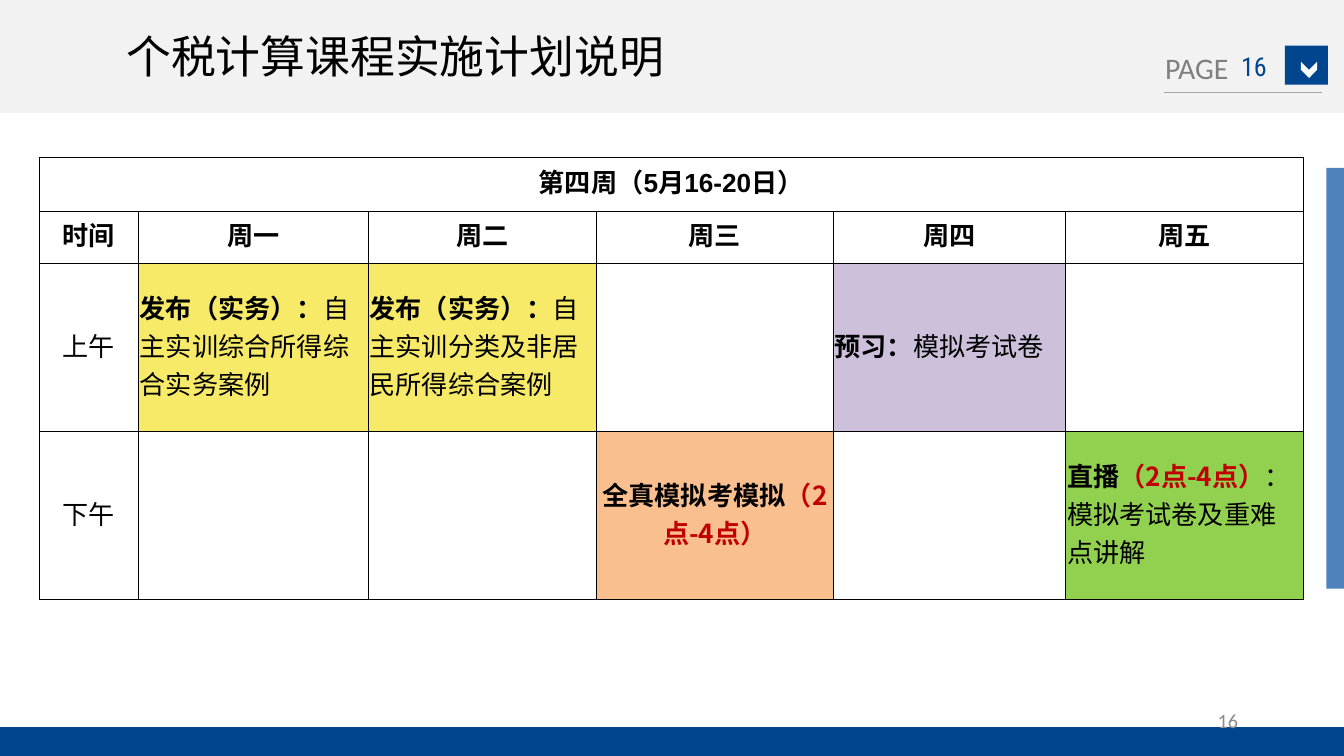
"""Build the weekly course plan slide with its page frame and timetable."""
from dataclasses import dataclass

import lxml.etree
import pptx
import pptx.dml.color
import pptx.enum.shapes
import pptx.enum.text
import pptx.oxml.ns
import pptx.util

Inches = pptx.util.Inches
Kind = pptx.enum.shapes.MSO_SHAPE
Align = pptx.enum.text.PP_ALIGN
Anchor = pptx.enum.text.MSO_ANCHOR
qn = pptx.oxml.ns.qn
HAN = "Noto Sans CJK SC"
NAVY, BLACK, RED = "01458E", "000000", "C00000"


@dataclass
class Box:
    at: tuple
    fill: str
    kind: int = Kind.RECTANGLE
    turn: float = 0


@dataclass
class Run:
    text: str
    bold: bool = False
    hue: str = BLACK
    size: float = 14
    face: str = HAN


@dataclass
class Label:
    at: tuple
    run: Run
    align: int = Align.LEFT
    anchor: int = Anchor.MIDDLE
    wrap: bool = True


@dataclass
class Slot:
    row: int
    col: int
    paras: list
    fill: str = ""
    align: int = Align.CENTER


def color(code: str):
    return pptx.dml.color.RGBColor.from_string(code)


def place(at: tuple) -> list:
    return [Inches(n) for n in at]


def format(thing, **values) -> None:
    for name, value in values.items():
        setattr(thing, name, value)


def write(para, runs: list, align: int) -> None:
    para.alignment = align
    for item in runs:
        run = para.add_run()
        run.text = item.text
        format(run.font, size=pptx.util.Pt(item.size), bold=item.bold, name=item.face)
        run.font.color.rgb = color(item.hue)
        lxml.etree.SubElement(run.font._element, qn("a:ea"), typeface=HAN)


def draw_box(shapes, box: Box) -> None:
    shape = shapes.add_shape(box.kind, *place(box.at))
    shape.shadow.inherit = False
    shape.rotation = box.turn
    shape.fill.solid()
    shape.fill.fore_color.rgb = color(box.fill)
    shape.line.fill.background()


def draw_rule(shapes, ends: tuple, hue: str) -> None:
    rule = shapes.add_connector(pptx.enum.shapes.MSO_CONNECTOR.STRAIGHT, *place(ends))
    rule.line.color.rgb = color(hue)
    rule.line.width = pptx.util.Pt(0.75)
    lxml.etree.SubElement(rule._element.spPr, qn("a:effectLst"))


def draw_label(shapes, label: Label) -> None:
    frame = shapes.add_textbox(*place(label.at)).text_frame
    format(frame, word_wrap=label.wrap, vertical_anchor=label.anchor)
    write(frame.paragraphs[0], [label.run], label.align)


def draw_title(shapes, text: str) -> None:
    title = shapes.title
    left, top, width, height = place((0.84, 0.16, 5.81, 0.5))
    format(title, left=left, top=top, width=width, height=height)
    format(title.text_frame, word_wrap=True, vertical_anchor=Anchor.TOP,
           auto_size=pptx.enum.text.MSO_AUTO_SIZE.NONE)
    write(title.text_frame.paragraphs[0], [Run(text, size=24, face="Arial")], Align.LEFT)
    shapes.element.append(title.element)


def style_cell(cell) -> None:
    edge = Inches(0.01)
    format(cell, margin_left=edge, margin_right=edge, margin_top=edge,
           margin_bottom=Inches(0.05), vertical_anchor=Anchor.MIDDLE)
    props = cell._tc.get_or_add_tcPr()
    for side in ("lnL", "lnR", "lnT", "lnB"):
        line = lxml.etree.SubElement(props, qn(f"a:{side}"), w=str(pptx.util.Pt(0.5)))
        fill = lxml.etree.SubElement(line, qn("a:solidFill"))
        lxml.etree.SubElement(fill, qn("a:srgbClr"), val=BLACK)
    cell.fill.background()


def draw_table(shapes, cols: list, rows: list, slots: list) -> None:
    at = (0.29, 1.17, sum(cols), sum(rows))
    table = shapes.add_table(len(rows), len(cols), *place(at)).table
    format(table, first_row=False, horz_banding=False)
    for col, width in zip(table.columns, cols):
        col.width = Inches(width)
    for row, height in zip(table.rows, rows):
        row.height = Inches(height)
    for cell in table.iter_cells():
        style_cell(cell)
    table.cell(0, 0).merge(table.cell(0, len(cols) - 1))
    for slot in slots:
        cell = table.cell(slot.row, slot.col)
        frame = cell.text_frame
        for i, runs in enumerate(slot.paras):
            para = frame.add_paragraph() if i else frame.paragraphs[0]
            write(para, runs, slot.align)
        if slot.fill:
            cell.fill.solid()
            cell.fill.fore_color.rgb = color(slot.fill)


BOXES = [
    Box((0, 0, 10, 0.84), "F2F2F2"),
    Box((0, 5.41, 10, 0.22), NAVY),
    Box((9.56, 0.34, 0.32, 0.29), NAVY),
    Box((9.68, 0.46, 0.12, 0.12), "FFFFFF", Kind.CHEVRON, 90),
    Box((9.87, 1.25, 0.13, 3.13), "4F81BD"),
]
LABELS = [
    Label((8.57, 0.32, 0.68, 0.37), Run("PAGE", hue="808080", size=16, face="Calibri"),
          anchor=Anchor.TOP, wrap=False),
    Label((9.09, 0.34, 0.48, 0.3), Run("16", hue=NAVY, face="Roboto Condensed"), Align.CENTER),
    Label((7.06, 5.21, 2.25, 0.3), Run("16", hue="8C8C8C", size=10.8, face="Calibri"),
          Align.RIGHT),
]
HEADS = ["时间", "周一", "周二", "周三", "周四", "周五"]
TASK = Run("发布（实务）：", True)
HOURS = Run("（2点-4点）", True, RED)
YELLOW = "F7EA68"
SLOTS = [
    Slot(0, 0, [[Run("第四周（5月16-20日）", True, face="Arial")]]),
    *[Slot(1, i, [[Run(head, True)]]) for i, head in enumerate(HEADS)],
    *[Slot(i, 0, [[Run(time)]]) for i, time in enumerate(["上午", "下午"], 2)],
    Slot(2, 1, [[TASK, Run("自主实训综合所得综合实务案例")]], YELLOW, Align.LEFT),
    Slot(2, 2, [[TASK, Run("自主实训分类及非居民所得综合案例")]], YELLOW, Align.LEFT),
    Slot(2, 4, [[Run("预习：", True), Run("模拟考试卷")]], "CCC0DA", Align.LEFT),
    Slot(3, 3, [[Run("全真模拟考模拟", True), HOURS]], "FABF8F"),
    Slot(3, 5, [[Run("直播", True), HOURS, Run("：")], [Run("模拟考试卷及重难点讲解")]],
         "92D050", Align.LEFT),
]


def main() -> None:
    deck = pptx.Presentation()
    wide = Inches(10)
    format(deck, slide_width=wide, slide_height=wide * 9 // 16)
    shapes = deck.slides.add_slide(deck.slide_layouts[5]).shapes
    for box in BOXES:
        draw_box(shapes, box)
    draw_rule(shapes, (8.66, 0.69, 9.84, 0.69), "A6A6A6")
    for label in LABELS:
        draw_label(shapes, label)
    draw_title(shapes, "个税计算课程实施计划说明")
    draw_table(shapes, [0.74, 1.71, 1.7, 1.76, 1.73, 1.77], [0.4, 0.39, 1.25, 1.25], SLOTS)
    deck.save("out.pptx")


if __name__ == "__main__":
    main()
